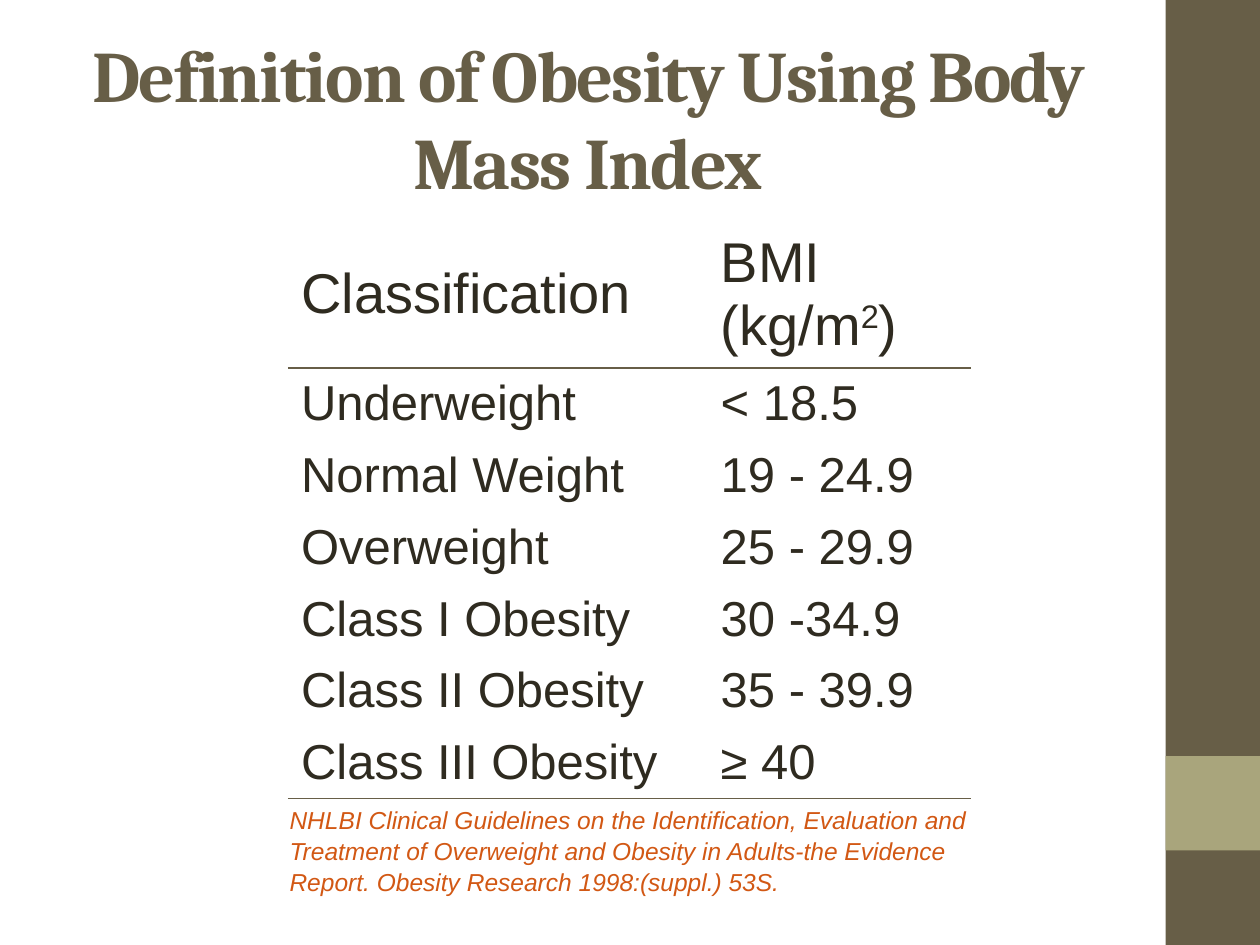
from lxml.etree import SubElement
from pptx import Presentation
from pptx.dml.color import RGBColor
from pptx.enum.shapes import MSO_SHAPE
from pptx.enum.text import MSO_ANCHOR, MSO_AUTO_SIZE, PP_ALIGN
from pptx.oxml.ns import qn
from pptx.util import Inches, Pt

BROWN = RGBColor(0x67, 0x5E, 0x47)
SAGE = RGBColor(0xA9, 0xA5, 0x7C)
INK = RGBColor(0x2F, 0x2B, 0x20)
ORANGE = RGBColor(0xD2, 0x58, 0x14)

# Each cell is a list of (text, is superscript) runs or a plain string.
ROWS = [
    ("Classification", [("BMI (kg/m", False), ("2", True), (")", False)]),
    ("Underweight", "< 18.5"),
    ("Normal Weight", "19 - 24.9"),
    ("Overweight", "25 - 29.9"),
    ("Class I Obesity", "30 -34.9"),
    ("Class II Obesity", "35 - 39.9"),
    ("Class III Obesity", "≥ 40"),
]


def style_font(font, name, size, color):
    font.name = name
    font.size = Pt(size)
    font.color.rgb = color


def add_block(s, box, color):
    sp = s.shapes.add_shape(MSO_SHAPE.RECTANGLE, *map(Inches, box))
    sp.shadow.inherit = False
    sp.fill.solid()
    sp.fill.fore_color.rgb = color
    sp.line.fill.background()


def add_sidebar(s, left, top, width, height):
    add_block(s, (left, top, width, height), BROWN)
    add_block(s, (left, top + 0.8 * height, width, width), SAGE)


def add_title(s, box):
    sp = s.shapes.title
    sp.left, sp.top, sp.width, sp.height = map(Inches, box)
    tf = sp.text_frame
    tf.text = "Definition of Obesity Using Body Mass Index"
    tf.word_wrap = True
    tf.auto_size = MSO_AUTO_SIZE.NONE
    tf.vertical_anchor = MSO_ANCHOR.MIDDLE
    p = tf.paragraphs[0]
    p.alignment = PP_ALIGN.CENTER
    r = p.runs[0]
    style_font(r.font, "Cambria", 41.4, BROWN)
    r.font.bold = True
    r.font._element.set("spc", "-100")


def set_border(cell, edge):
    """Draw a rule along one edge: lnT or lnB."""
    ln = SubElement(cell._tc.get_or_add_tcPr(), qn(f"a:{edge}"), w=str(Pt(1)))
    fill = SubElement(ln, qn("a:solidFill"))
    SubElement(fill, qn("a:srgbClr"), val=str(BROWN))


def fill_cell(cell, content, size):
    cell.vertical_anchor = MSO_ANCHOR.MIDDLE
    p = cell.text_frame.paragraphs[0]
    runs = [(content, False)] if isinstance(content, str) else content
    for text, raised in runs:
        r = p.add_run()
        r.text = text
        style_font(r.font, "Arial", size, INK)
        if raised:
            r.font._element.set("baseline", "30000")


def add_bmi_table(s, left, top, width, height):
    header_height = 1.17
    row_height = (height - header_height) / (len(ROWS) - 1)
    shape = s.shapes.add_table(len(ROWS), 2, *map(Inches, (left, top, width, height)))
    table = shape.table
    table.first_row = table.horz_banding = False
    table.columns[0].width = Inches(3.33)
    table.columns[1].width = Inches(width - 3.33)
    for i, row in enumerate(ROWS):
        table.rows[i].height = Inches(row_height if i else header_height)
        for j, content in enumerate(row):
            cell = table.cell(i, j)
            fill_cell(cell, content, 28 if i else 32)
            if i == 1:
                set_border(cell, "lnT")
            if i in (0, len(ROWS) - 1):
                set_border(cell, "lnB")
            cell.fill.background()


def add_citation(s, box):
    tf = s.shapes.add_textbox(*map(Inches, box)).text_frame
    tf.word_wrap = True
    p = tf.paragraphs[0]
    p.text = ("NHLBI Clinical Guidelines on the Identification, Evaluation and "
              "Treatment of Overweight and Obesity in Adults-the Evidence Report. "
              "Obesity Research 1998:(suppl.) 53S.")
    p.line_spacing = 1.05
    p._p.get_or_add_pPr().set("marL", str(Inches(0.12)))
    r = p.runs[0]
    style_font(r.font, "Arial", 14, ORANGE)
    r.font.italic = True


def main():
    prs = Presentation()
    prs.slide_width, prs.slide_height = Inches(10), Inches(7.5)
    s = prs.slides.add_slide(prs.slide_layouts[5])
    add_sidebar(s, 9.25, 0, 0.75, 7.5)
    add_title(s, (0.5, 0.3, 8.33, 1.25))
    add_citation(s, (2.08, 6.33, 6, 0.8))
    add_bmi_table(s, 2.29, 1.75, 5.41, 4.59)
    prs.save("out.pptx")


if __name__ == "__main__":
    main()
